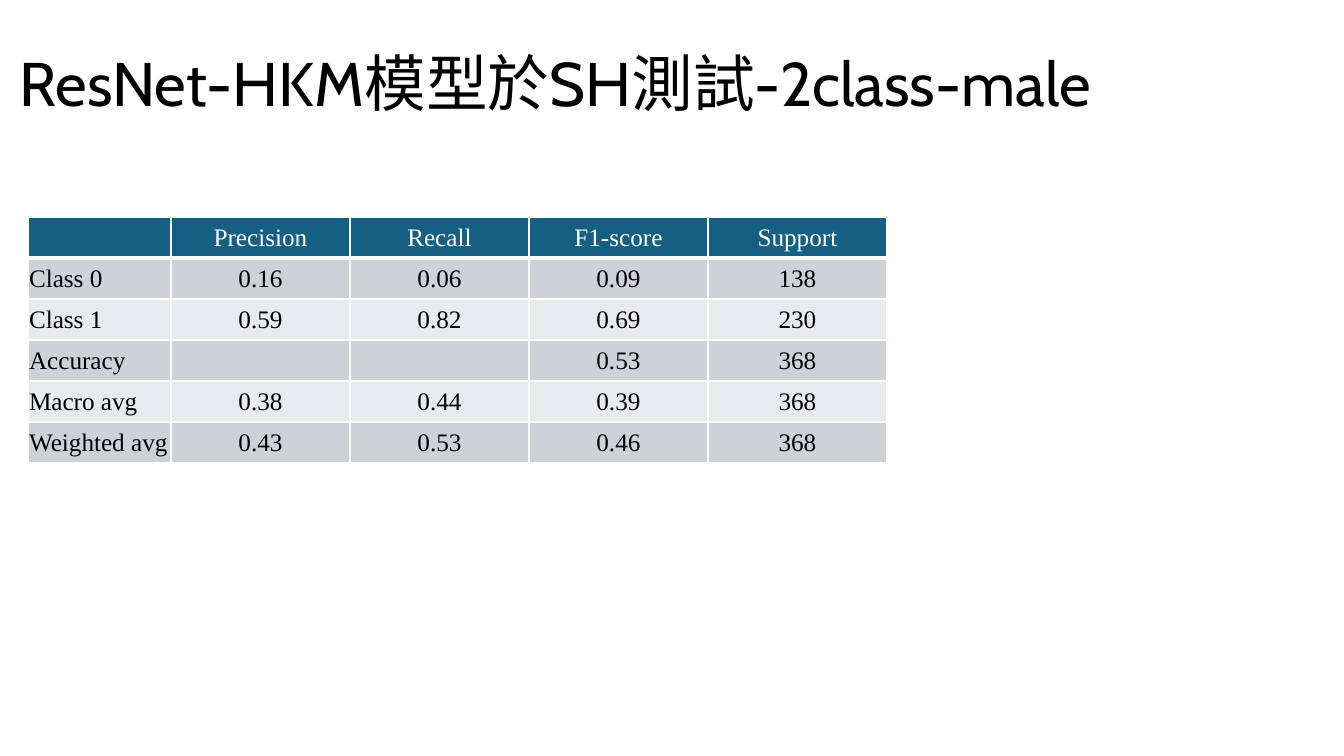
from lxml.etree import SubElement
from pptx import Presentation
from pptx.dml.color import RGBColor
from pptx.enum.text import MSO_ANCHOR, PP_ALIGN
from pptx.oxml.ns import qn
from pptx.util import Emu, Pt

BLACK = RGBColor(0x00, 0x00, 0x00)
WHITE = RGBColor(0xFF, 0xFF, 0xFF)
HEADER = RGBColor(0x15, 0x60, 0x82)
BANDS = RGBColor(0xCC, 0xD2, 0xD8), RGBColor(0xE8, 0xEA, 0xED)

SCORES = [
    ["", "Precision", "Recall", "F1-score", "Support"],
    ["Class 0", "0.16", "0.06", "0.09", "138"],
    ["Class 1", "0.59", "0.82", "0.69", "230"],
    ["Accuracy", "", "", "0.53", "368"],
    ["Macro avg", "0.38", "0.44", "0.39", "368"],
    ["Weighted avg", "0.43", "0.53", "0.46", "368"],
]


def px(n):
    """Turn pixels, 100.8 to the inch, into EMU."""
    return Emu(round(n * 914400 / 100.8))


class SlideBuilder:
    title_font = "Cabin"
    table_font = "Times New Roman"

    def __init__(self, prs):
        self.slide = prs.slides.add_slide(prs.slide_layouts[6])

    def format_runs(self, p, font, size, color):
        for r in p.runs:
            r.font.name = font
            r.font.size = Pt(size)
            r.font.color.rgb = color

    def title(self, text, x, y, w, h):
        tf = self.slide.shapes.add_textbox(px(x), px(y), px(w), px(h)).text_frame
        tf.word_wrap = True
        tf.vertical_anchor = MSO_ANCHOR.MIDDLE
        tf.text = text
        p = tf.paragraphs[0]
        p.line_spacing = 0.9
        self.format_runs(p, self.title_font, 44, BLACK)

    def table(self, rows, x, y, col_widths, row_height):
        """Draw rows with a dark header, banded body and left-aligned labels."""
        frame = self.slide.shapes.add_table(
            len(rows), len(col_widths), px(x), px(y),
            px(sum(col_widths)), px(row_height * len(rows)))
        table = frame.table
        table.first_row = table.horz_banding = False
        for col, width in zip(table.columns, col_widths):
            col.width = px(width)
        for i, values in enumerate(rows):
            table.rows[i].height = px(row_height)
            for j, value in enumerate(values):
                self.cell(table.cell(i, j), value, i, j)

    def cell(self, cell, text, row, col):
        cell.margin_left = cell.margin_right = cell.margin_top = px(1)
        cell.margin_bottom = 0
        cell.vertical_anchor = MSO_ANCHOR.MIDDLE
        self.borders(cell, top=3 if row == 1 else 1, bottom=3 if row == 0 else 1)
        cell.fill.solid()
        cell.fill.fore_color.rgb = BANDS[(row - 1) % 2] if row else HEADER
        cell.text = text
        p = cell.text_frame.paragraphs[0]
        p.alignment = PP_ALIGN.CENTER if col else PP_ALIGN.LEFT
        p.font.size = Pt(18)
        self.format_runs(p, self.table_font, 18, BLACK if row else WHITE)

    def borders(self, cell, top, bottom):
        """Add white cell borders; must run before the cell is filled."""
        tc_pr = cell._tc.get_or_add_tcPr()
        for side, width in zip("LRTB", (1, 1, top, bottom)):
            ln = SubElement(tc_pr, qn(f"a:ln{side}"), w=str(Pt(width)))
            fill = SubElement(ln, qn("a:solidFill"))
            SubElement(fill, qn("a:srgbClr"), val=str(WHITE))


def main():
    prs = Presentation()
    prs.slide_width, prs.slide_height = px(1344), px(756)
    s = SlideBuilder(prs)
    s.title("ResNet-HKM模型於SH測試-2class-male", 10, 14, 1314, 146)
    s.table(SCORES, 28, 217, [143] + [179] * 4, 41)
    prs.save("out.pptx")


if __name__ == "__main__":
    main()
